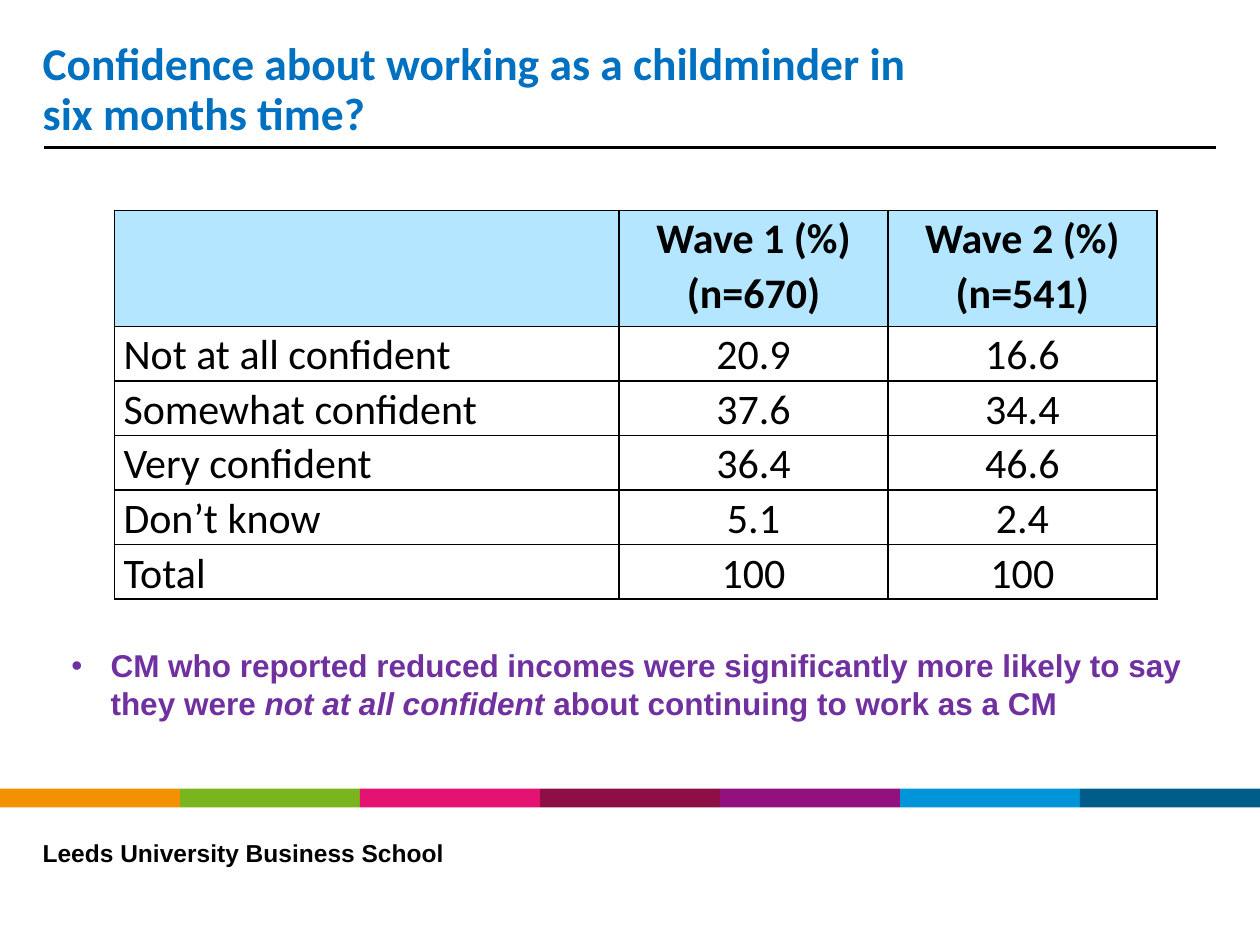
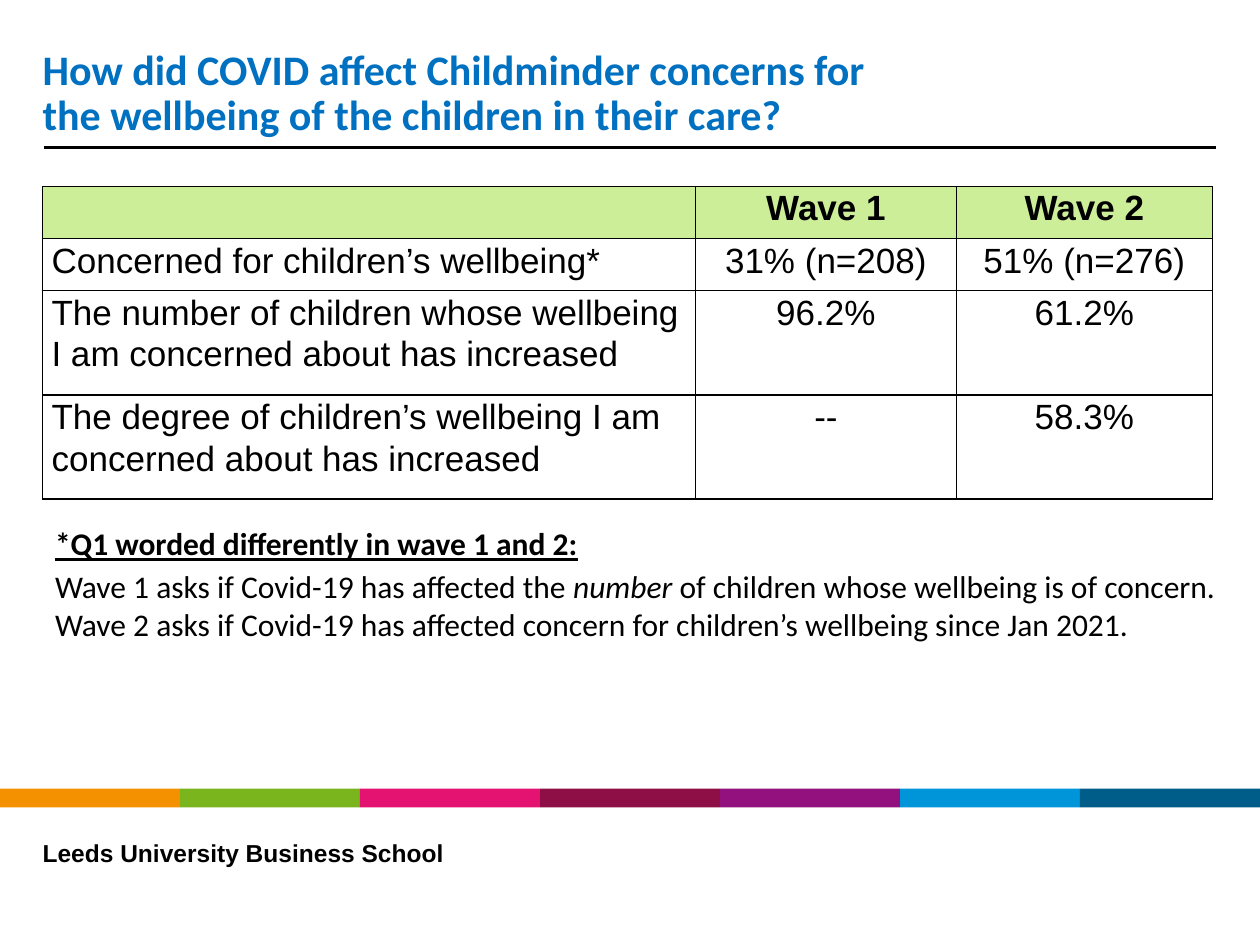
from dataclasses import dataclass

from lxml import etree
from pptx import Presentation
from pptx.dml.color import RGBColor
from pptx.enum.shapes import MSO_CONNECTOR, MSO_SHAPE
from pptx.enum.text import MSO_ANCHOR, MSO_AUTO_SIZE, PP_ALIGN
from pptx.oxml.ns import qn
from pptx.util import Cm, Pt

LEFT, CENTER = PP_ALIGN.LEFT, PP_ALIGN.CENTER
TOP, BOTTOM = MSO_ANCHOR.TOP, MSO_ANCHOR.BOTTOM
NO_AUTOFIT = MSO_AUTO_SIZE.NONE
STRAIGHT = MSO_CONNECTOR.STRAIGHT
RECTANGLE = MSO_SHAPE.RECTANGLE
TITLE_ONLY = 5


@dataclass(frozen=True)
class Theme:
    width: float = 25.4
    height: float = 19.05
    margin: float = 0.86
    heading_font: str = "Calibri"
    body_font: str = "Arial"
    black: str = "000000"
    title: str = "0070C0"
    finding: str = "7030A0"
    blue_header: str = "B4E7FF"
    green_header: str = "CDEE98"
    band: tuple = ("F39100", "7AB51D", "E41270", "8E0E46",
                   "93117E", "0095D8", "005C88")
    title_size: int = 26
    long_title_size: int = 24
    large_table_size: int = 24
    table_size: int = 20
    note_size: int = 18
    footer_size: int = 14


THEME = Theme()


def format_runs(paragraph, font, size, color, bold=False):
    for run in paragraph.runs:
        run.font.name = font
        run.font.size = Pt(size)
        run.font.bold = bold
        run.font.color.rgb = RGBColor.from_string(color)


def add_runs(paragraph, pieces):
    """Add text pieces, putting every second one in italics."""
    for index, piece in enumerate(pieces):
        run = paragraph.add_run()
        run.text = piece
        run.font.italic = index % 2 == 1


def set_insets(frame, horizontal, vertical):
    frame.margin_left = frame.margin_right = Cm(horizontal)
    frame.margin_top = frame.margin_bottom = Cm(vertical)


def add_text_frame(slide, box, insets=(0.25, 0.13)):
    frame = slide.shapes.add_textbox(*map(Cm, box)).text_frame
    frame.word_wrap = True
    frame.vertical_anchor = TOP
    set_insets(frame, *insets)
    return frame


# Title and the rule below it
def add_title(slide, text, size, box):
    title = slide.shapes.title
    title.left, title.top, title.width, title.height = map(Cm, box)
    frame = title.text_frame
    frame.text = text
    frame.word_wrap = True
    frame.auto_size = NO_AUTOFIT
    frame.vertical_anchor = BOTTOM
    set_insets(frame, 0, 0)
    heading = frame.paragraphs[0]
    heading.alignment = LEFT
    heading.line_spacing = 0.9
    format_runs(heading, THEME.heading_font, size, THEME.title, bold=True)

    left, top, _, height = box
    rule_y = Cm(top + height + 0.15)
    rule = slide.shapes.add_connector(
        STRAIGHT, Cm(left + 0.03), rule_y, Cm(THEME.width - 0.89), rule_y)
    rule.line.color.rgb = RGBColor.from_string(THEME.black)
    rule.line.width = Pt(1.5)
    etree.SubElement(rule._element.spPr, qn("a:effectLst"))


# Colour band across the slide, with the school name below
def add_footer(slide, box):
    left, top, width, height = box
    stripe_width = width / len(THEME.band)
    band = slide.shapes.add_group_shape()
    for index, color in enumerate(THEME.band):
        stripe = band.shapes.add_shape(
            RECTANGLE, Cm(left + index * stripe_width), Cm(top),
            Cm(stripe_width), Cm(height))
        stripe.shadow.inherit = False
        stripe.fill.solid()
        stripe.fill.fore_color.rgb = RGBColor.from_string(color)
        stripe.line.fill.background()

    school_box = (left + THEME.margin, top + 1.1, 9.42, 0.48)
    school = add_text_frame(slide, school_box, insets=(0, 0)).paragraphs[0]
    school.text = "Leeds University Business School"
    school.line_spacing = 0.8
    format_runs(school, THEME.body_font, THEME.footer_size, THEME.black,
                bold=True)


def add_borders(cell):
    properties = cell._tc.get_or_add_tcPr()
    for side in ("lnL", "lnR", "lnT", "lnB"):
        border = etree.SubElement(properties, qn(f"a:{side}"), w=str(Pt(1)))
        fill = etree.SubElement(border, qn("a:solidFill"))
        etree.SubElement(fill, qn("a:srgbClr"), val=THEME.black)


# Table of survey waves, with a coloured header row
def add_wave_table(slide, origin, widths, heights, rows, font, size,
                   header_color):
    table = slide.shapes.add_table(
        len(rows), len(widths), *map(Cm, origin),
        Cm(sum(widths)), Cm(sum(heights))).table
    table.first_row = table.horz_banding = False
    for column, width in zip(table.columns, widths):
        column.width = Cm(width)
    for row, height in zip(table.rows, heights):
        row.height = Cm(height)

    for row_index, row in enumerate(rows):
        is_header = row_index == 0
        for column_index, text in enumerate(row):
            cell = table.cell(row_index, column_index)
            cell.text = text
            set_insets(cell, 0.18, 0)
            add_borders(cell)
            if is_header:
                cell.fill.solid()
                cell.fill.fore_color.rgb = RGBColor.from_string(header_color)
            else:
                cell.fill.background()
            for paragraph in cell.text_frame.paragraphs:
                paragraph.alignment = CENTER if column_index else LEFT
                paragraph.line_spacing = 1.07
                format_runs(paragraph, font, size, THEME.black, is_header)


# Bulleted key finding
def add_finding(slide, box, pieces):
    finding = add_text_frame(slide, box).paragraphs[0]
    properties = finding._p.get_or_add_pPr()
    properties.set("marL", str(Cm(0.79)))
    properties.set("indent", str(-Cm(0.79)))
    etree.SubElement(properties, qn("a:buFont"), typeface=THEME.body_font)
    etree.SubElement(properties, qn("a:buChar"), char="•")
    add_runs(finding, pieces)
    format_runs(finding, THEME.body_font, THEME.note_size, THEME.finding,
                bold=True)


# Underlined heading with an explanation
def add_wording_note(slide, box, heading_text, pieces):
    frame = add_text_frame(slide, box)
    heading = frame.paragraphs[0]
    heading.text = heading_text
    heading.runs[0].font.underline = True
    explanation = frame.add_paragraph()
    add_runs(explanation, pieces)
    for paragraph in frame.paragraphs:
        paragraph.space_after = Pt(3)
        format_runs(paragraph, THEME.heading_font, THEME.note_size,
                    THEME.black, bold=paragraph.runs[0].font.underline is True)


def add_survey_slide(deck, title, title_size):
    slide = deck.slides.add_slide(deck.slide_layouts[TITLE_ONLY])
    add_title(slide, title, title_size, (THEME.margin, 0.61, 17.93, 2.21))
    add_footer(slide, (0, 15.9, THEME.width, 0.38))
    return slide


def build_confidence_slide(deck):
    slide = add_survey_slide(
        deck, "Confidence about working as a childminder in six months time?",
        THEME.title_size)
    rows = [
        ("", "Wave 1 (%)\n(n=670)", "Wave 2 (%)\n(n=541)"),
        ("Not at all confident", "20.9", "16.6"),
        ("Somewhat confident", "37.6", "34.4"),
        ("Very confident", "36.4", "46.6"),
        ("Don’t know", "5.1", "2.4"),
        ("Total", "100", "100"),
    ]
    add_wave_table(slide, (2.31, 4.24), (10.17, 5.42, 5.42),
                   [2.34] + [1.1] * 5, rows, THEME.heading_font,
                   THEME.large_table_size, THEME.blue_header)
    add_finding(slide, (1.19, 12.9, 22.96, 1.8), (
        "CM who reported reduced incomes were significantly more likely "
        "to say they were ",
        "not at all confident",
        " about continuing to work as a CM"))


def build_wellbeing_slide(deck):
    slide = add_survey_slide(
        deck, "How did COVID affect Childminder concerns for the wellbeing "
        "of the children in their care?", THEME.long_title_size)
    rows = [
        ("", "Wave 1", "Wave 2"),
        ("Concerned for children’s wellbeing*", "31% (n=208)", "51% (n=276)"),
        ("The number of children whose wellbeing I am concerned about "
         "has increased", "96.2%", "61.2%"),
        ("The degree of children’s wellbeing I am concerned about "
         "has increased", "--", "58.3%"),
    ]
    add_wave_table(slide, (THEME.margin, 3.76), (13.16, 5.26, 5.16),
                   (1.05, 1.05, 2.1, 2.1), rows, THEME.body_font,
                   THEME.table_size, THEME.green_header)
    add_wording_note(
        slide, (THEME.margin, 10.44, 24.21, 2.67),
        "*Q1 worded differently in wave 1 and 2:",
        ("Wave 1 asks if Covid-19 has affected the ",
         "number",
         " of children whose wellbeing is of concern. Wave 2 asks if Covid-19 "
         "has affected concern for children’s wellbeing since Jan 2021."))


def main():
    deck = Presentation()
    deck.slide_width, deck.slide_height = Cm(THEME.width), Cm(THEME.height)
    build_confidence_slide(deck)
    build_wellbeing_slide(deck)
    deck.save("out.pptx")


if __name__ == "__main__":
    main()
